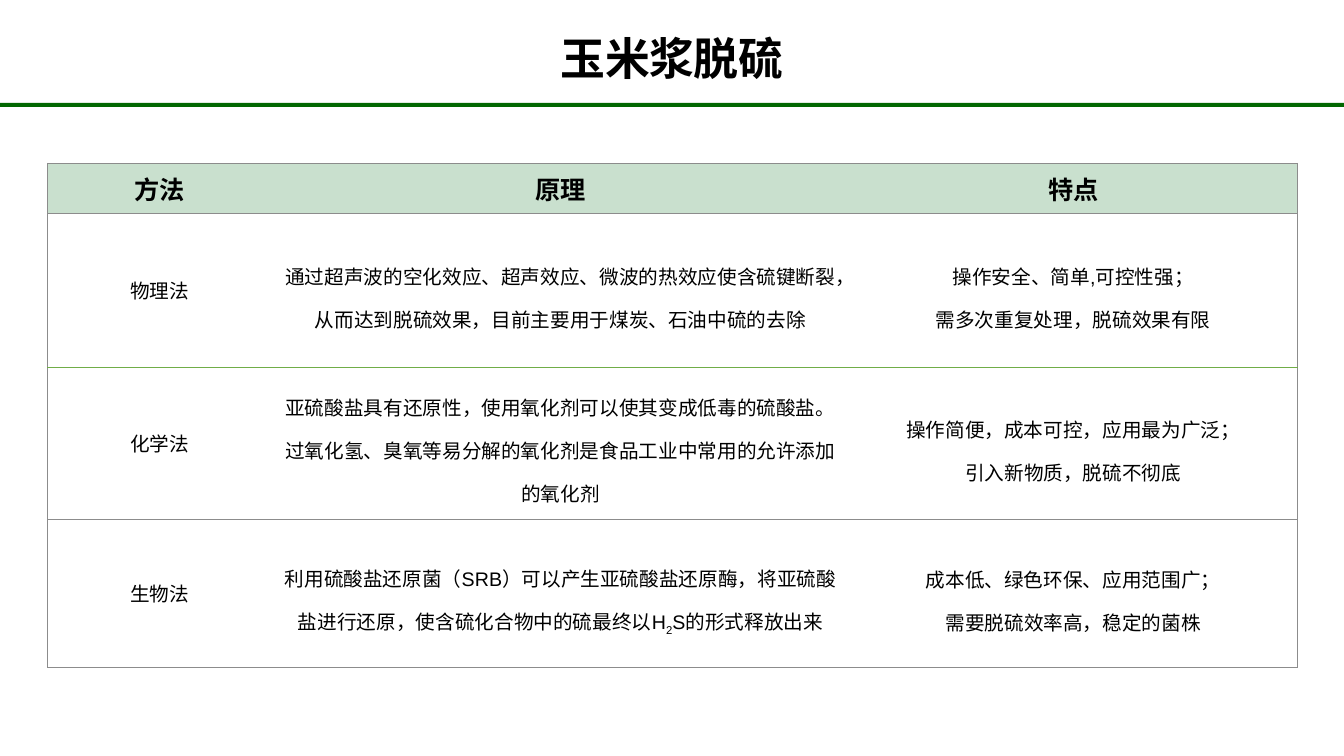
from lxml import etree
from pptx import Presentation
from pptx.dml.color import RGBColor
from pptx.enum.shapes import MSO_SHAPE as SHAPE
from pptx.enum.text import MSO_ANCHOR as ANCHOR, MSO_AUTO_SIZE as AUTO, PP_ALIGN as ALIGN
from pptx.oxml.ns import qn
from pptx.util import Inches, Pt

CJK = "Noto Sans CJK SC"
GREY, GREEN = "8C8C8C", "70AD47"
COLUMNS = [2.23, 5.72, 4.45]
ROWS = [0.5, 1.52, 1.51, 1.47]
RULES = [GREY, GREY, GREEN, GREY, GREY]
METHODS = [
    ["方法", "原理", "特点"],
    ["物理法",
     "通过超声波的空化效应、超声效应、微波的热效应使含硫键断裂，从而达到脱硫效果，目前主要用于煤炭、石油中硫的去除",
     "操作安全、简单,可控性强；\n需多次重复处理，脱硫效果有限"],
    ["化学法",
     "亚硫酸盐具有还原性，使用氧化剂可以使其变成低毒的硫酸盐。过氧化氢、臭氧等易分解的氧化剂是食品工业中常用的允许添加的氧化剂",
     "操作简便，成本可控，应用最为广泛；\n引入新物质，脱硫不彻底"],
    ["生物法",
     "利用硫酸盐还原菌（SRB）可以产生亚硫酸盐还原酶，将亚硫酸盐进行还原，使含硫化合物中的硫最终以H|2|S的形式释放出来",
     "成本低、绿色环保、应用范围广；\n需要脱硫效率高，稳定的菌株"],
]


def rgb(color):
    """Turn a hex string into a colour."""
    return RGBColor.from_string(color)


def format_run(r, size, bold, latin):
    """Set the fonts, size and weight of a run."""
    r.font.name, r.font.size, r.font.bold = latin, Pt(size), bold
    r.font.color.rgb = rgb("000000")
    etree.SubElement(r.font._element, qn("a:ea"), typeface=CJK)


def add_title(slide, text):
    """Place and format the slide title."""
    sp = slide.shapes.title
    sp.left, sp.top, sp.width, sp.height = map(Inches, (1.98, 0.3, 9.37, 0.55))
    tf = sp.text_frame
    tf.text = text
    tf.auto_size, tf.vertical_anchor = AUTO.NONE, ANCHOR.MIDDLE
    tf.margin_left = tf.margin_right = tf.margin_top = tf.margin_bottom = 0
    p = tf.paragraphs[0]
    p.alignment = ALIGN.CENTER
    format_run(p.runs[0], 32, True, CJK)
    p.runs[0].font._element.set("spc", "-30")


def add_bar(slide):
    """Draw the green bar under the title."""
    sp = slide.shapes.add_shape(SHAPE.RECTANGLE, 0, Inches(1.02), Inches(13.33), Inches(0.04))
    sp.shadow.inherit = False
    sp.fill.solid()
    sp.fill.fore_color.rgb = rgb("026701")
    sp.line.fill.background()


def set_border(cell, side, color):
    """Draw one side of a cell, or hide it when there is no colour."""
    ln = etree.SubElement(cell._tc.get_or_add_tcPr(), qn(f"a:ln{side}"), w=str(Pt(0.5)))
    if color:
        fill = etree.SubElement(ln, qn("a:solidFill"))
        etree.SubElement(fill, qn("a:srgbClr"), val=color)
    else:
        etree.SubElement(ln, qn("a:noFill"))


def fill_cell(cell, text, header, spacing):
    """Write a cell, with text between bars as subscript."""
    cell.vertical_anchor = ANCHOR.MIDDLE
    tf = cell.text_frame
    for i, line in enumerate(text.split("\n")):
        p = tf.add_paragraph() if i else tf.paragraphs[0]
        p.alignment, p.line_spacing = ALIGN.CENTER, spacing
        for j, part in enumerate(line.split("|")):
            r = p.add_run()
            r.text = part
            format_run(r, 18 if header else 14, header, "Arial")
            if j % 2:
                r.font._element.set("baseline", "-25000")


def add_methods_table(slide):
    """Build the table of desulfurization methods."""
    frame = slide.shapes.add_table(len(ROWS), len(COLUMNS), Inches(0.47), Inches(1.62),
                                   Inches(sum(COLUMNS)), Inches(sum(ROWS)))
    table = frame.table
    table.first_row = table.horz_banding = False
    for column, width in zip(table.columns, COLUMNS):
        column.width = Inches(width)
    for i, (height, texts) in enumerate(zip(ROWS, METHODS)):
        table.rows[i].height = Inches(height)
        for j, text in enumerate(texts):
            cell = table.cell(i, j)
            fill_cell(cell, text, i == 0, 1.5 if i and j else 1.0)
            set_border(cell, "L", GREY if j == 0 else None)
            set_border(cell, "R", GREY if j == len(COLUMNS) - 1 else None)
            set_border(cell, "T", RULES[i])
            set_border(cell, "B", RULES[i + 1])
            cell.fill.solid()
            cell.fill.fore_color.rgb = rgb("FFFFFF" if i else "C9E0CE")


def main():
    """Build and save the slide."""
    prs = Presentation()
    prs.slide_width, prs.slide_height = Inches(13.33), Inches(7.5)
    slide = prs.slides.add_slide(prs.slide_layouts[5])
    add_methods_table(slide)
    add_bar(slide)
    add_title(slide, "玉米浆脱硫")
    prs.save("out.pptx")


if __name__ == "__main__":
    main()
